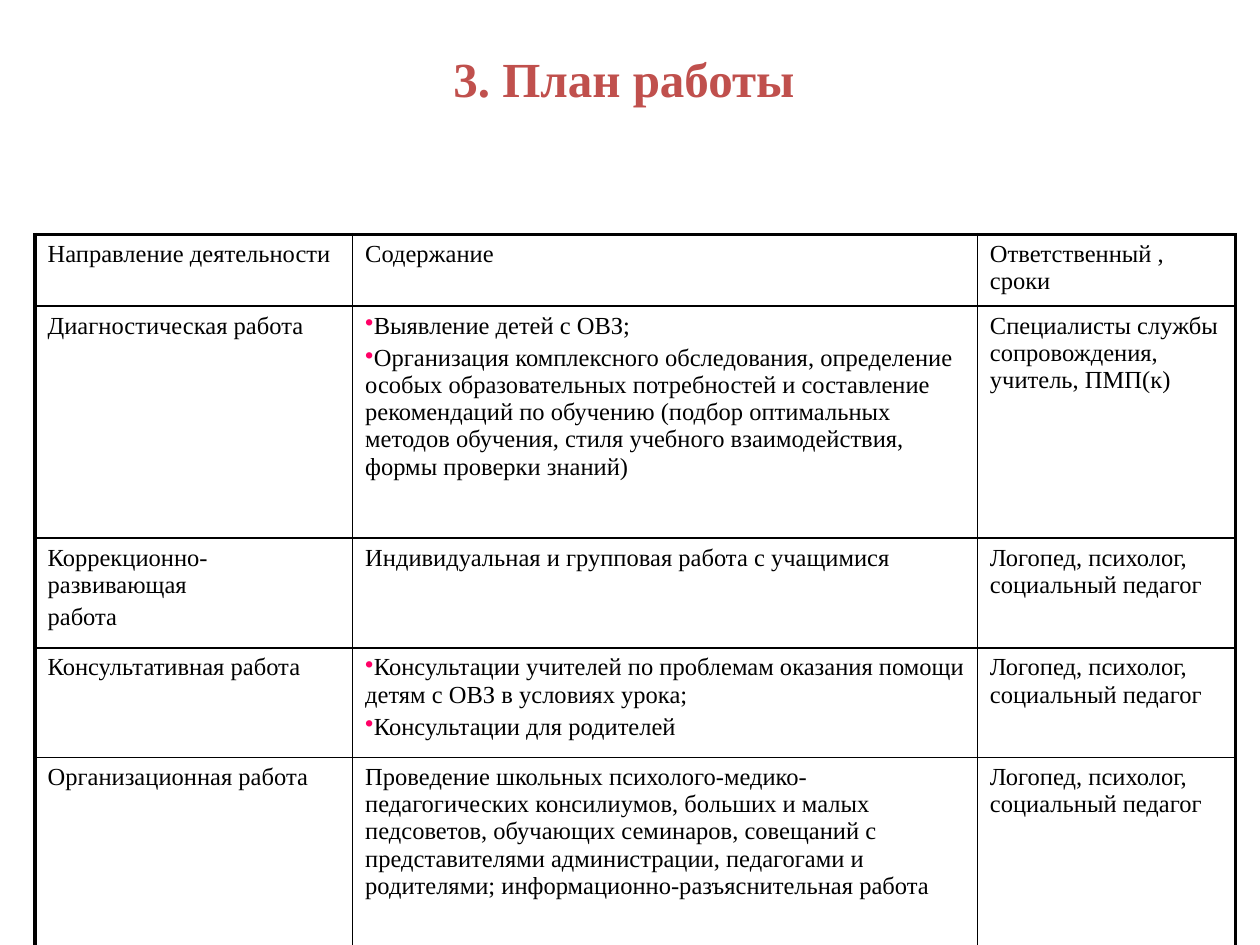
from lxml.etree import SubElement
from pptx import Presentation
from pptx.dml.color import RGBColor
from pptx.enum.text import MSO_ANCHOR, PP_ALIGN
from pptx.oxml import parse_xml
from pptx.oxml.ns import nsdecls, qn
from pptx.util import Pt

COLORS = {"title": "C0504D", "text": "000000", "border": "000000", "bullet": "FF0066"}
THIN, THICK = 1, 2.25


def write(paragraph, text, size=14, color="text", bold=False,
          align=PP_ALIGN.LEFT, bullet=False, before=0):
    if bullet:
        props = paragraph._p.get_or_add_pPr()
        props.set("marL", "0")
        props.set("indent", "0")
        bullet_color = SubElement(props, qn("a:buClr"))
        SubElement(bullet_color, qn("a:srgbClr"), val=COLORS["bullet"])
        SubElement(props, qn("a:buChar"), char="•")
    paragraph.alignment = align
    paragraph.space_before = Pt(before)
    run = paragraph.add_run()
    run.text = text
    run.font.name = "Times New Roman"
    run.font.size = Pt(size)
    run.font.bold = bold
    run.font.color.rgb = RGBColor.from_string(COLORS[color])


def set_borders(cell, **widths):
    props = cell._tc.get_or_add_tcPr()
    for position, (side, width) in enumerate(widths.items()):
        props.insert(position, parse_xml(
            f'<a:ln{side} {nsdecls("a")} w="{Pt(width)}"><a:solidFill>'
            f'<a:srgbClr val="{COLORS["border"]}"/></a:solidFill></a:ln{side}>'))


prs = Presentation()
prs.slide_width, prs.slide_height = Pt(720), Pt(540)
slide = prs.slides.add_slide(prs.slide_layouts[5])

# Title
title = slide.shapes.title
title.left, title.top, title.width, title.height = Pt(36), Pt(0), Pt(648), Pt(88.5)
title.text_frame.vertical_anchor = MSO_ANCHOR.MIDDLE
write(title.text_frame.paragraphs[0], "3. План работы ", size=28,
      color="title", bold=True, align=PP_ALIGN.CENTER)

# Work plan: each cell is a list of paragraphs, "•" marks a bulleted one
specialists = ["Логопед, психолог, социальный педагог"]
plan = [
    [["Направление деятельности"], ["Содержание"], ["Ответственный , сроки"]],
    [["Диагностическая работа"],
     ["•Выявление детей с ОВЗ;",
      "•Организация комплексного обследования, определение особых образовательных "
      "потребностей и составление рекомендаций по обучению (подбор оптимальных "
      "методов обучения, стиля учебного взаимодействия, формы проверки знаний)"],
     ["Специалисты службы сопровождения, учитель, ПМП(к)"]],
    [["Коррекционно-развивающая", "работа"],
     ["Индивидуальная и групповая работа с учащимися"],
     specialists],
    [["Консультативная работа"],
     ["•Консультации учителей по проблемам оказания помощи детям с ОВЗ "
      "в условиях урока;",
      "•Консультации для родителей"],
     specialists],
    [["Организационная работа"],
     ["Проведение школьных психолого-медико-педагогических консилиумов, больших "
      "и малых педсоветов, обучающих семинаров, совещаний с представителями "
      "администрации, педагогами и родителями; информационно-разъяснительная работа"],
     specialists],
]
column_widths = [181.5, 357, 147.5]
row_heights = [41, 132.5, 62.75, 62.75, 148.5]

# Table
table = slide.shapes.add_table(
    len(plan), len(column_widths), Pt(20), Pt(134),
    Pt(sum(column_widths)), Pt(sum(row_heights))).table
table.first_row = table.horz_banding = False
for column, width in zip(table.columns, column_widths):
    column.width = Pt(width)
for row, height in zip(table.rows, row_heights):
    row.height = Pt(height)

last_column = len(column_widths) - 1
for r, entries in enumerate(plan):
    for c, paragraphs in enumerate(entries):
        cell = table.cell(r, c)
        cell.fill.background()
        set_borders(cell, L=THICK if c == 0 else THIN,
                    R=THICK if c == last_column else THIN,
                    T=THICK if r == 0 else THIN, B=THIN)
        frame = cell.text_frame
        for i, text in enumerate(paragraphs):
            paragraph = frame.add_paragraph() if i else frame.paragraphs[0]
            write(paragraph, text.lstrip("•"), bullet=text.startswith("•"),
                  before=3 if i else 0)

prs.save("out.pptx")
